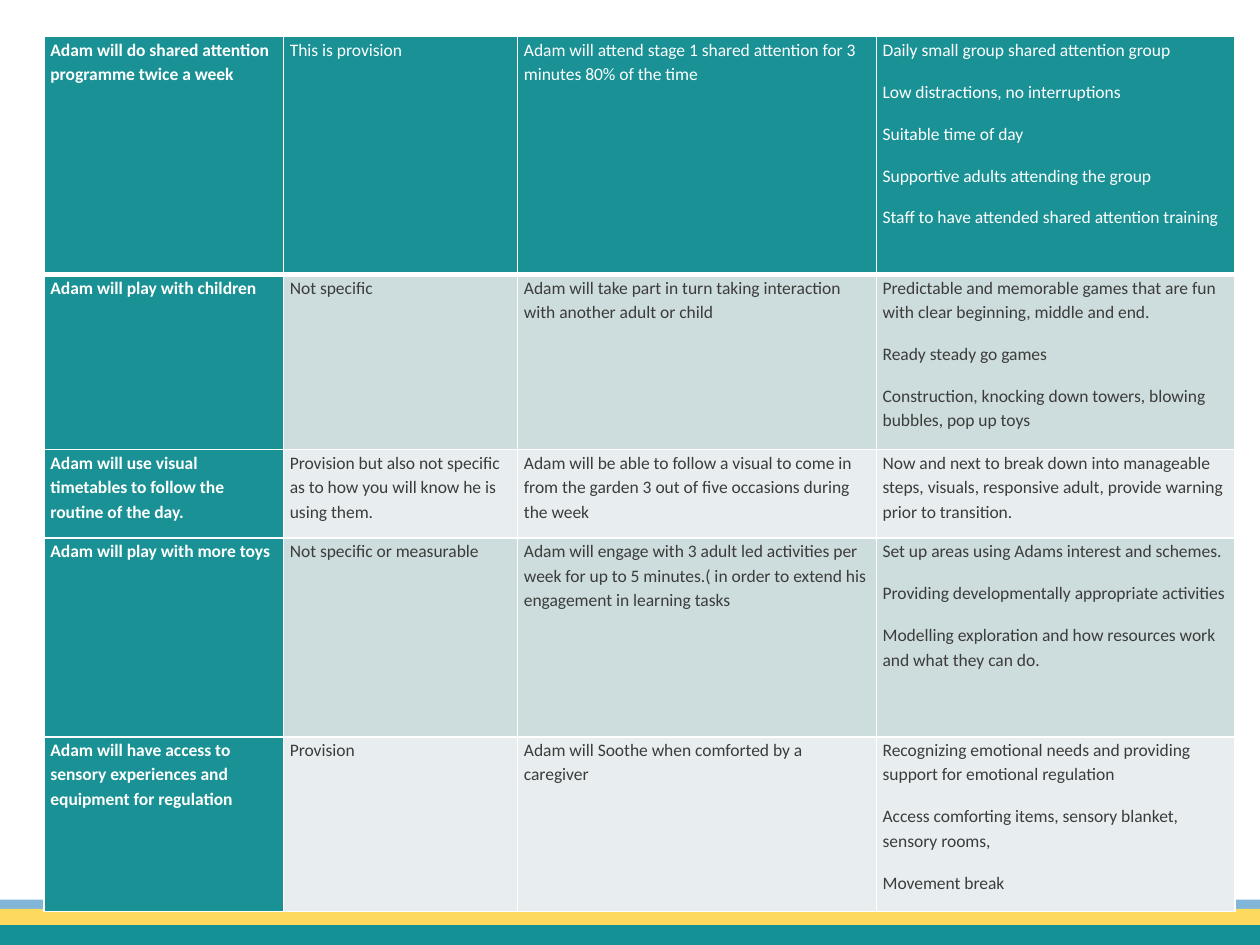
from lxml.etree import SubElement
from pptx import Presentation
from pptx.dml.color import RGBColor
from pptx.enum.shapes import MSO_SHAPE as Shape
from pptx.oxml.ns import qn
from pptx.util import Pt

TEAL, WHITE, INK = "1A9195", "FFFFFF", "3C3C3B"
ROW_TINTS = ["E8EEEF", "CDDCDD"]
COLUMN_WIDTHS = [136.8, 133.8, 205, 205]
ROW_HEIGHTS = [136, 100, 50.6, 113.6, 99.8]
BANDS = [(514.1, 5.6, "82B6D9"), (519.4, 9.4, "FDD95E"), (528.6, 13.4, "149197")]

TARGETS = [
    ["Adam will do shared attention programme twice a week",
     "This is provision",
     "Adam will attend stage 1 shared attention for 3 minutes 80% of the time",
     ["Daily small group shared attention group",
      "Low distractions, no interruptions",
      "Suitable time of day",
      "Supportive adults attending the group",
      "Staff to have attended shared attention training"]],
    ["Adam will play with children",
     "Not specific",
     "Adam will take part in turn taking interaction with another adult or child",
     ["Predictable and memorable games that are fun with clear beginning, middle and end.",
      "Ready steady go games",
      "Construction, knocking down towers, blowing bubbles, pop up toys"]],
    ["Adam will use visual timetables to follow the routine of the day.",
     "Provision but also not specific as to how you will know he is using them.",
     "Adam will be able to follow a visual to come in from the garden 3 out of five "
     "occasions during the week",
     "Now and next to break down into manageable steps, visuals, responsive adult, "
     "provide warning prior to transition."],
    ["Adam will play with more toys",
     "Not specific or measurable",
     "Adam will engage with 3 adult led activities per week for up to 5 minutes.( in order "
     "to extend his engagement in learning tasks",
     ["Set up areas using Adams interest and schemes.",
      "Providing developmentally appropriate activities",
      "Modelling exploration and how resources work and what they can do."]],
    ["Adam will have access to sensory experiences and equipment for regulation",
     "Provision",
     "Adam will Soothe when comforted by a caregiver",
     ["Recognizing emotional needs and providing support for emotional regulation",
      "Access comforting items, sensory blanket, sensory rooms,",
      "Movement break"]],
]


def rgb(hex_color):
    return RGBColor.from_string(hex_color)


def write(frame, text, color=INK, bold=False, size=10, font="Calibri"):
    lines = [text] if isinstance(text, str) else text
    for index, line in enumerate(lines):
        paragraph = frame.add_paragraph() if index else frame.paragraphs[0]
        paragraph.line_spacing = 1.15
        paragraph.space_after = Pt(10)
        run = paragraph.add_run()
        run.text = line
        run.font.name = font
        run.font.size = Pt(size)
        run.font.bold = bold
        run.font.color.rgb = rgb(color)


def add_border(cell, side, width):
    line = SubElement(cell._tc.get_or_add_tcPr(), qn(f"a:ln{side}"), w=str(Pt(width)))
    fill = SubElement(line, qn("a:solidFill"))
    SubElement(fill, qn("a:srgbClr"), val=WHITE)


def add_footer(slide, left, width):
    for top, height, color in BANDS:
        band = slide.shapes.add_shape(Shape.RECTANGLE, Pt(left), Pt(top), Pt(width), Pt(height))
        band.shadow.inherit = False
        band.fill.solid()
        band.fill.fore_color.rgb = rgb(color)
        band.line.fill.background()


def add_targets(slide, left, top, width, height):
    table = slide.shapes.add_table(len(TARGETS), len(COLUMN_WIDTHS),
                                   Pt(left), Pt(top), Pt(width), Pt(height)).table
    for column, column_width in zip(table.columns, COLUMN_WIDTHS):
        column.width = Pt(column_width)
    for r, (target, row_height) in enumerate(zip(TARGETS, ROW_HEIGHTS)):
        table.rows[r].height = Pt(row_height)
        for c, text in enumerate(target):
            cell = table.cell(r, c)
            cell.margin_left = cell.margin_right = Pt(3.6)
            cell.margin_top = cell.margin_bottom = Pt(0)
            for side in "LRTB":
                under_header = (r, side) in [(0, "B"), (1, "T")]
                add_border(cell, side, 3 if under_header else 1)
            strong = r == 0 or c == 0
            cell.fill.solid()
            cell.fill.fore_color.rgb = rgb(TEAL if strong else ROW_TINTS[r % 2])
            write(cell.text_frame, text, color=WHITE if strong else INK, bold=c == 0)


def main():
    deck = Presentation()
    deck.slide_width, deck.slide_height = Pt(720), Pt(540)
    slide = deck.slides.add_slide(deck.slide_layouts[6])
    add_footer(slide, 0, 720)
    add_targets(slide, 25.2, 20.9, sum(COLUMN_WIDTHS), sum(ROW_HEIGHTS))
    deck.save("out.pptx")


if __name__ == "__main__":
    main()
